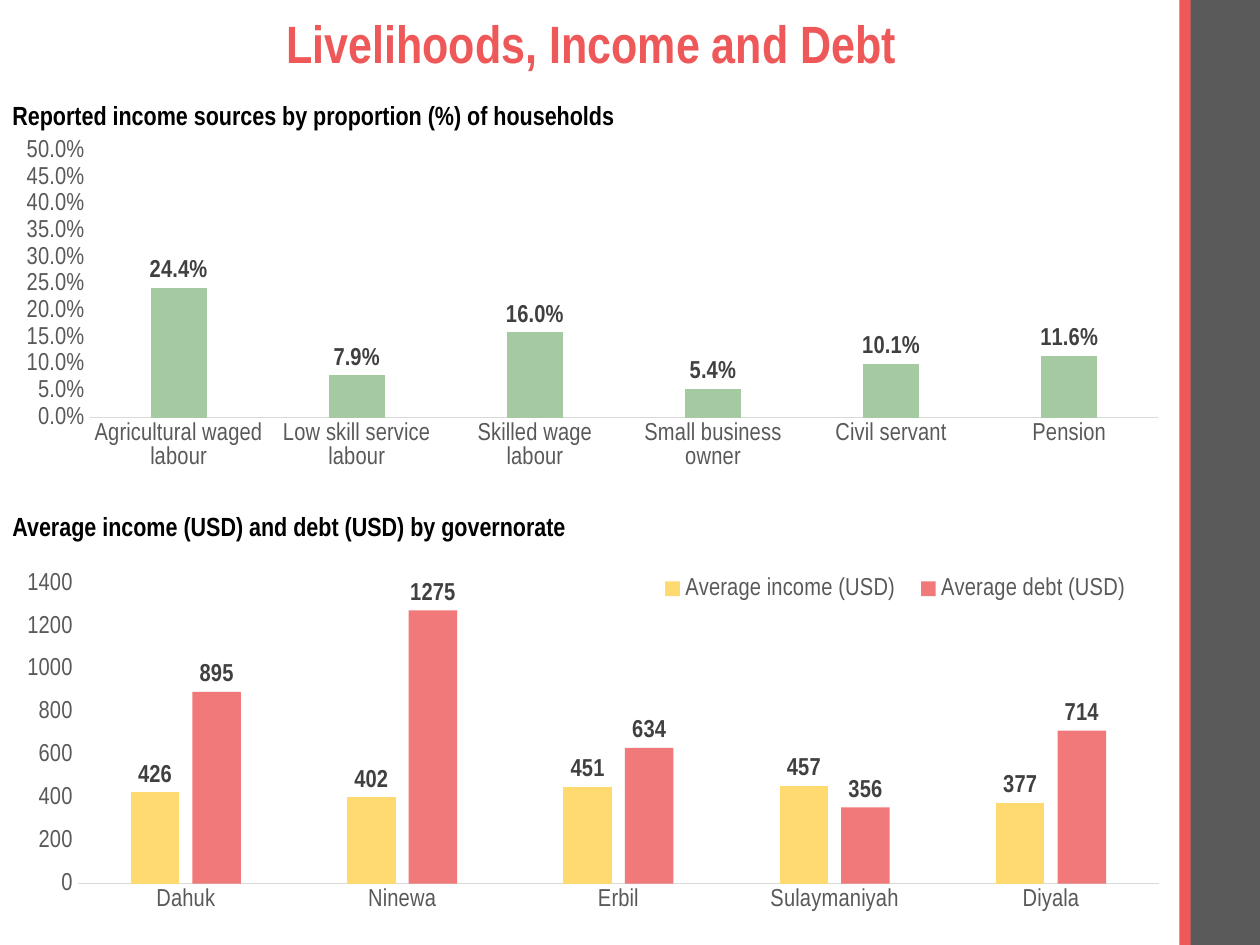
from lxml import etree
from pptx import Presentation
from pptx.chart import data as chart_data
from pptx.dml import color
from pptx.enum import chart as chart_enum, shapes, text
from pptx.oxml import ns
from pptx.util import Inches, Pt

FONT = "Arial Narrow"
RED = "EE5859"


def rgb(value):
    return color.RGBColor.from_string(value)


def style_font(font, size, hex_color, bold=False):
    font.name = FONT
    font.size = Pt(size)
    font.bold = bold
    font.color.rgb = rgb(hex_color)


def place(shape, left, top, width, height):
    shape.left, shape.top = Inches(left), Inches(top)
    shape.width, shape.height = Inches(width), Inches(height)


def add_title(slide, wording):
    title = slide.shapes.title
    place(title, 0.35, 0, 8.69, 0.74)
    title.text_frame.text = wording
    title.text_frame.vertical_anchor = text.MSO_ANCHOR.MIDDLE
    paragraph = title.text_frame.paragraphs[0]
    paragraph.alignment = text.PP_ALIGN.CENTER
    paragraph.line_spacing = 0.9
    style_font(paragraph.font, 30, RED, True)


def add_bar(slide, left, width, hex_color):
    bar = slide.shapes.add_shape(
        shapes.MSO_SHAPE.RECTANGLE, Inches(left), 0, Inches(width), Inches(7.5))
    bar.shadow.inherit = False
    bar.fill.solid()
    bar.fill.fore_color.rgb = rgb(hex_color)
    bar.line.fill.background()


def add_heading(slide, wording, top, width):
    box = slide.shapes.add_textbox(0, Inches(top), Inches(width), Inches(0.35))
    box.text_frame.word_wrap = True
    box.text_frame.text = wording
    style_font(box.text_frame.paragraphs[0].font, 15, "000000", True)


def set_layout(parent, index, bounds, inner=False):
    for old in parent.findall(ns.qn("c:layout")):
        parent.remove(old)
    layout = etree.Element(ns.qn("c:layout"))
    manual = etree.SubElement(layout, ns.qn("c:manualLayout"))
    settings = [("layoutTarget", "inner")] if inner else []
    settings += [("xMode", "edge"), ("yMode", "edge"), *zip("xywh", bounds)]
    for name, value in settings:
        etree.SubElement(manual, ns.qn(f"c:{name}")).set("val", str(value))
    parent.insert(index, layout)


def style_axes(chart, number_format, maximum):
    for axis in (chart.category_axis, chart.value_axis):
        axis.has_major_gridlines = False
        axis.major_tick_mark = chart_enum.XL_TICK_MARK.NONE
        axis.minor_tick_mark = chart_enum.XL_TICK_MARK.NONE
        style_font(axis.tick_labels.font, 14, "595959")
    chart.category_axis.format.line.color.rgb = rgb("D9D9D9")
    chart.category_axis.format.line.width = Pt(0.75)
    value_axis = chart.value_axis
    value_axis.format.line.fill.background()
    value_axis.minimum_scale = 0
    value_axis.maximum_scale = maximum
    value_axis.tick_labels.number_format = number_format
    value_axis.tick_labels.number_format_is_linked = False


def style_series(series, hex_color, opacity, number_format):
    fill = series.format.fill
    fill.solid()
    fill.fore_color.rgb = rgb(hex_color)
    series.invert_if_negative = False
    if opacity < 100:
        tint = series.format.fill._xPr.find(".//" + ns.qn("a:srgbClr"))
        etree.SubElement(tint, ns.qn("a:alpha")).set("val", str(opacity * 1000))
    labels = series.data_labels
    labels.show_value = True
    labels.position = chart_enum.XL_LABEL_POSITION.OUTSIDE_END
    labels.number_format = number_format
    labels.number_format_is_linked = False
    style_font(labels.font, 14, "404040", True)


def add_column_chart(slide, bounds, plot_bounds, categories, columns,
                     number_format, maximum):
    data = chart_data.CategoryChartData(number_format=number_format)
    data.categories = categories
    for name, values, _, _ in columns:
        data.add_series(name, values)
    chart = slide.shapes.add_chart(
        chart_enum.XL_CHART_TYPE.COLUMN_CLUSTERED,
        *(Inches(length) for length in bounds), data).chart
    style_font(chart.font, 14, "000000")
    chart.has_title = False
    chart.has_legend = False
    plot = chart.plots[0]
    plot.gap_width = 219
    plot.overlap = -27
    plot.vary_by_categories = False
    style_axes(chart, number_format, maximum)
    for series, (_, _, hex_color, opacity) in zip(plot.series, columns):
        style_series(series, hex_color, opacity, number_format)
    set_layout(chart._chartSpace.chart.plotArea, 0, plot_bounds, True)
    return chart


def add_legend(chart, bounds):
    chart.has_legend = True
    legend = chart.legend
    legend.position = chart_enum.XL_LEGEND_POSITION.BOTTOM
    legend.include_in_layout = False
    style_font(legend.font, 14, "595959")
    set_layout(legend._element, 1, bounds)


def main():
    presentation = Presentation()
    presentation.slide_width, presentation.slide_height = Inches(10), Inches(7.5)
    slide = presentation.slides.add_slide(presentation.slide_layouts[5])

    add_bar(slide, 9.44, 0.56, "5A5A5A")
    add_bar(slide, 9.36, 0.09, RED)
    add_title(slide, "Livelihoods, Income and Debt")
    add_heading(slide, "Reported income sources by proportion (%) of households", 0.74, 9.35)
    add_heading(slide, "Average income (USD) and debt (USD) by governorate", 4, 8.74)

    add_column_chart(
        slide, (0, 1.09, 9.24, 2.81), (0.077, 0.039, 0.918, 0.753),
        ["Agricultural waged labour", "Low skill service labour",
         "Skilled wage labour", "Small business owner", "Civil servant", "Pension"],
        [("Series 1", [0.244, 0.079, 0.16, 0.054, 0.101, 0.116], "A5C9A1", 100)],
        "0.0%", 0.5)
    governorates = add_column_chart(
        slide, (0, 4.46, 9.35, 3.04), (0.066, 0.057, 0.918, 0.783),
        ["Dahuk", "Ninewa", "Erbil", "Sulaymaniyah", "Diyala"],
        [("Average income (USD)", [426, 402, 451, 457, 377], "FFDA71", 100),
         ("Average debt (USD)", [895, 1275, 634, 356, 714], RED, 80)],
        "0", 1400)
    add_legend(governorates, (0.55, 0.02, 0.42, 0.1))
    presentation.save("out.pptx")


if __name__ == "__main__":
    main()
